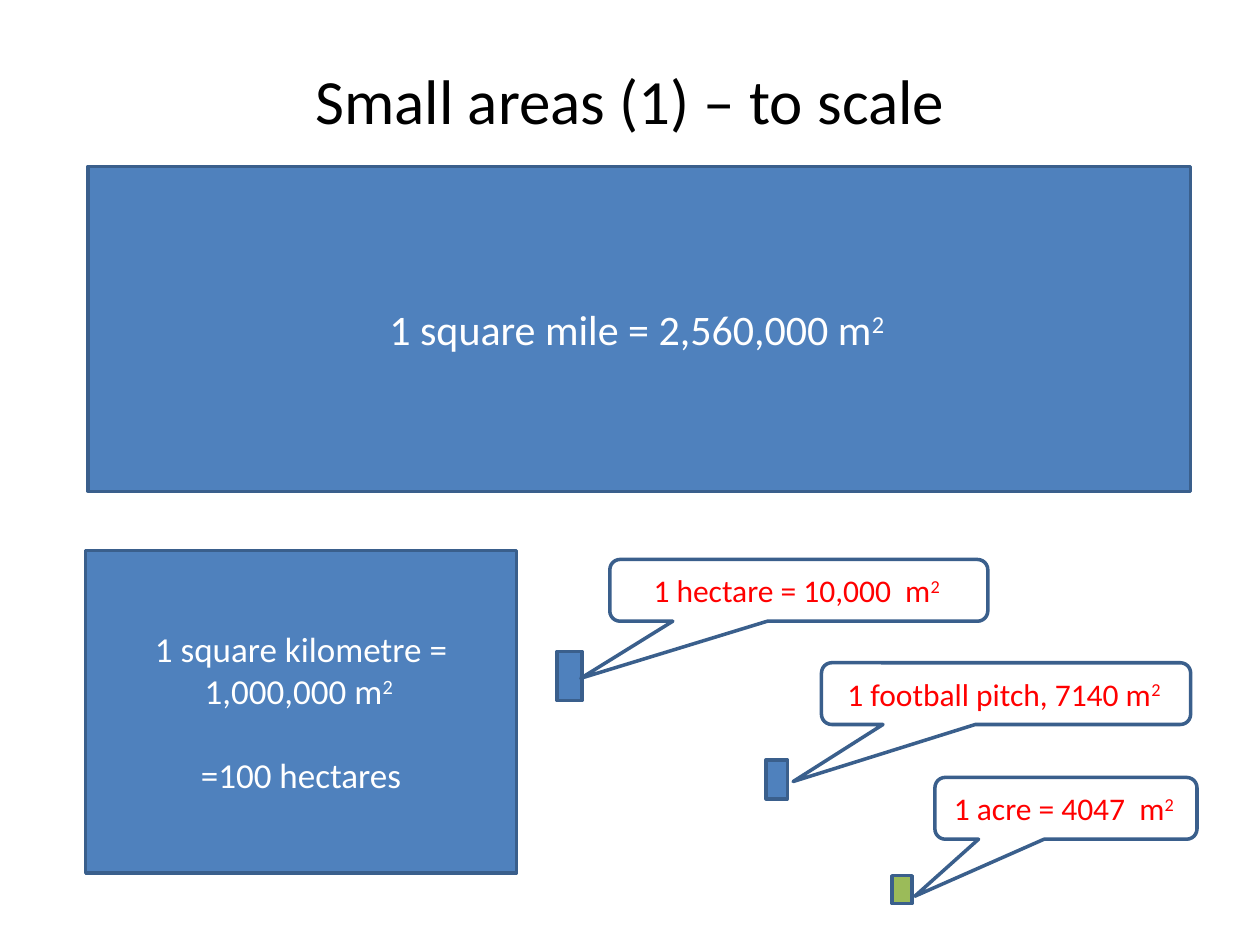
"""Build a slide that compares small areas drawn to scale."""
from pptx import Presentation
from pptx.dml.color import RGBColor
from pptx.enum.shapes import MSO_SHAPE
from pptx.enum.text import MSO_ANCHOR, PP_ALIGN
from pptx.util import Inches, Pt

RECTANGLE = MSO_SHAPE.RECTANGLE
CALLOUT = MSO_SHAPE.ROUNDED_RECTANGULAR_CALLOUT
CENTER = PP_ALIGN.CENTER
MIDDLE = MSO_ANCHOR.MIDDLE
FONT = "Calibri"
COLORS = {
    "blue": "4F81BD",
    "outline": "3A5F8C",
    "green": "9BBB59",
    "black": "000000",
    "white": "FFFFFF",
    "red": "FF0000",
}
CALLOUT_HEIGHT = 0.49
CALLOUT_ADJUSTMENTS = (-0.577, 1.424, 0.167)


def color(name):
    """Return the named colour."""
    return RGBColor.from_string(COLORS[name])


def add_span(para, text, size, color_name, superscript=False):
    """Append formatted text to a paragraph."""
    span = para.add_run()
    span.text = text
    span.font.name = FONT
    span.font.size = Pt(size)
    span.font.color.rgb = color(color_name)
    if superscript:
        span.font._element.set("baseline", "30000")


def write_area(shape, text, size, color_name):
    """Write a centred area text that ends in a raised 2."""
    shape.text_frame.vertical_anchor = MIDDLE
    para = shape.text_frame.paragraphs[0]
    para.alignment = CENTER
    add_span(para, text, size, color_name)
    add_span(para, "2 ", size, color_name, superscript=True)


def add_outlined(page, kind, left, top, width, height, fill=None):
    """Add an outlined shape, filled when a colour is named."""
    shape = page.shapes.add_shape(
        kind, Inches(left), Inches(top), Inches(width), Inches(height))
    shape.shadow.inherit = False
    shape.line.color.rgb = color("outline")
    shape.line.width = Pt(2)
    if fill:
        shape.fill.solid()
        shape.fill.fore_color.rgb = color(fill)
    else:
        shape.fill.background()
    return shape


def add_callout(page, left, top, width, text):
    """Add a callout pointing to the lower left."""
    callout = add_outlined(page, CALLOUT, left, top, width, CALLOUT_HEIGHT)
    for index, value in enumerate(CALLOUT_ADJUSTMENTS):
        callout.adjustments[index] = value
    write_area(callout, text, 18, "red")


def add_title(page, text):
    """Place and format the slide title."""
    title = page.shapes.title
    title.left, title.top = Inches(0.75), Inches(0.33)
    title.width, title.height = Inches(8.5), Inches(0.92)
    title.text_frame.vertical_anchor = MIDDLE
    para = title.text_frame.paragraphs[0]
    para.alignment = CENTER
    add_span(para, text, 36, "black")


def main():
    """Build and save the deck."""
    deck = Presentation()
    deck.slide_width, deck.slide_height = Inches(10), Inches(7.5)
    page = deck.slides.add_slide(deck.slide_layouts[5])
    add_title(page, "Small areas (1) – to scale")

    mile = add_outlined(page, RECTANGLE, 0.7, 1.32, 8.75, 2.58, "blue")
    write_area(mile, "1 square mile = 2,560,000 m", 24, "white")

    kilometre = add_outlined(page, RECTANGLE, 0.68, 4.37, 3.42, 2.56, "blue")
    write_area(kilometre, "1 square kilometre = 1,000,000 m", 20, "white")
    para = kilometre.text_frame.add_paragraph()
    para.alignment = CENTER
    para.space_before = Pt(24)
    add_span(para, "=100 hectares", 20, "white")

    small_areas = [
        ((4.42, 5.17, 0.2, 0.39), "blue",
         (4.84, 4.44, 3), "1 hectare = 10,000  m"),
        ((6.08, 6.03, 0.17, 0.31), "blue",
         (6.52, 5.26, 2.93), "1 football pitch, 7140 m"),
        ((7.08, 6.95, 0.16, 0.22), "green",
         (7.42, 6.17, 2.08), "1 acre = 4047  m"),
    ]
    for area_box, fill, callout_box, text in small_areas:
        add_outlined(page, RECTANGLE, *area_box, fill)
        add_callout(page, *callout_box, text)

    deck.save("out.pptx")


if __name__ == "__main__":
    main()
